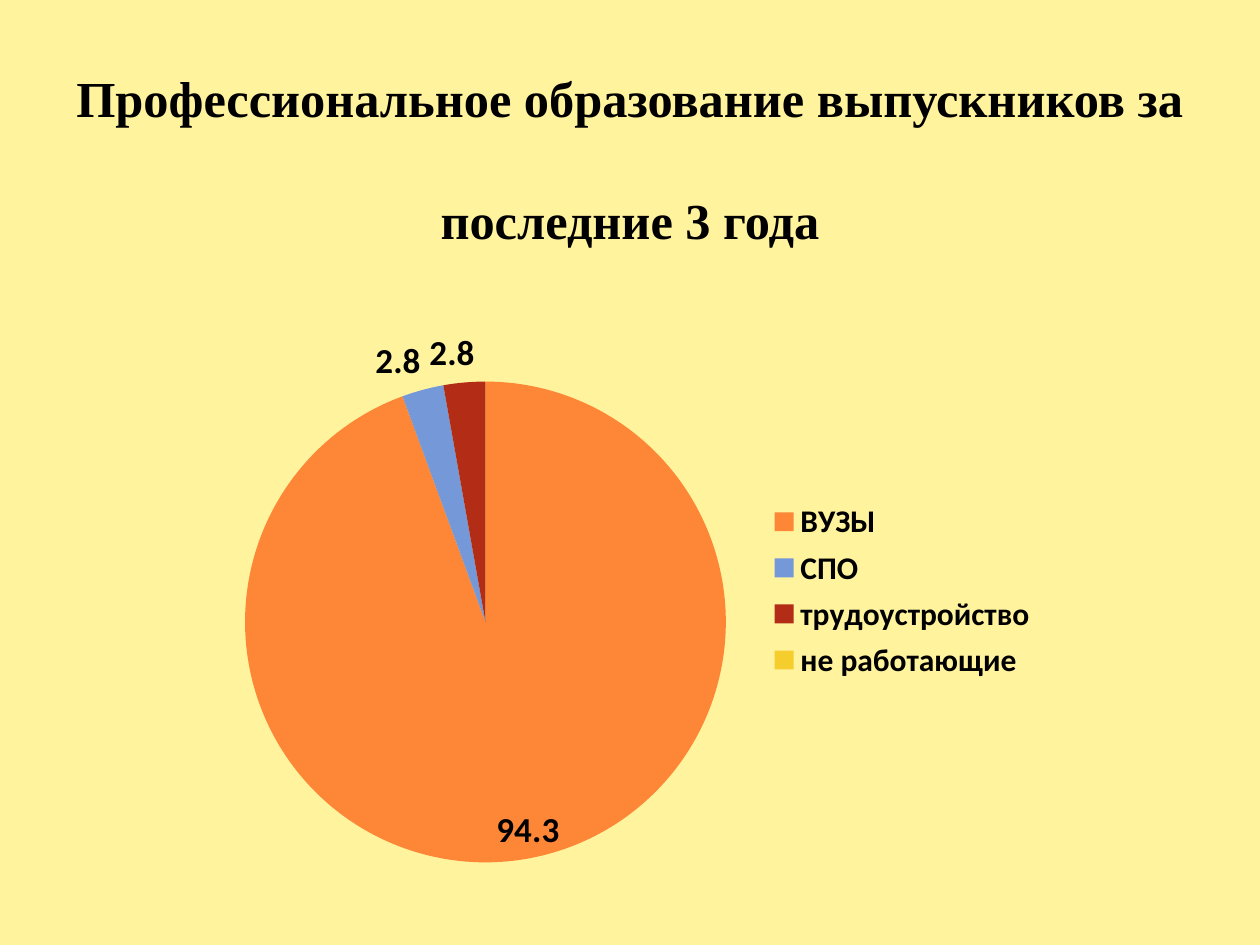
from lxml import etree
from pptx import Presentation
from pptx.chart.data import CategoryChartData
from pptx.dml.color import RGBColor
from pptx.enum.chart import XL_CHART_TYPE, XL_LABEL_POSITION, XL_LEGEND_POSITION
from pptx.enum.text import MSO_ANCHOR, MSO_AUTO_SIZE, PP_ALIGN
from pptx.oxml.ns import qn
from pptx.util import Pt

PIE = XL_CHART_TYPE.PIE
LEGEND_RIGHT = XL_LEGEND_POSITION.RIGHT
INSIDE, OUTSIDE = XL_LABEL_POSITION.INSIDE_END, XL_LABEL_POSITION.OUTSIDE_END
TOP, CENTER, NO_FIT = MSO_ANCHOR.TOP, PP_ALIGN.CENTER, MSO_AUTO_SIZE.NONE

CREAM = RGBColor(0xFF, 0xF3, 0x9D)
BLACK = RGBColor(0, 0, 0)
ORANGE = RGBColor(0xFE, 0x86, 0x37)
BLUE = RGBColor(0x75, 0x98, 0xD9)
RED = RGBColor(0xB3, 0x2C, 0x16)
YELLOW = RGBColor(0xF5, 0xCD, 0x2D)


class Deck:
    title_font, chart_font = "Times New Roman", "Calibri"

    def __init__(self, prs):
        self.s = prs.slides.add_slide(prs.slide_layouts[5])
        fill = self.s.background.fill
        fill.solid()
        fill.fore_color.rgb = CREAM

    def style(self, font, name, size, bold=True):
        font.name, font.size, font.bold = name, Pt(size), bold
        font.color.rgb = BLACK

    def title(self, lines, x, y, w, h):
        sp = self.s.shapes.title
        sp.left, sp.top, sp.width, sp.height = Pt(x), Pt(y), Pt(w), Pt(h)
        tf = sp.text_frame
        tf.text = "\n".join(lines)
        tf.word_wrap, tf.auto_size, tf.vertical_anchor = True, NO_FIT, TOP
        tf.margin_left = tf.margin_right = 0
        tf.margin_top = Pt(17)
        for i, p in enumerate(tf.paragraphs):
            p.alignment = CENTER
            p.line_spacing = 1.0
            p.space_before = Pt(35 if i else 0)
            self.style(p.font, self.title_font, 28.8)

    def layout(self, parent, index, settings):
        """Give a chart part a manual layout, as its child number index."""
        for old in parent.findall(qn("c:layout")):
            parent.remove(old)
        layout = etree.Element(qn("c:layout"))
        parent.insert(index, layout)
        manual = etree.SubElement(layout, qn("c:manualLayout"))
        for key, value in settings.items():
            etree.SubElement(manual, qn("c:" + key)).set("val", str(value))

    def pie(self, name, slices, x, y, w, h):
        data = CategoryChartData()
        data.categories = [label for label, *_ in slices]
        data.add_series(name, [value for _, value, *_ in slices])
        chart = self.s.shapes.add_chart(PIE, Pt(x), Pt(y), Pt(w), Pt(h), data).chart
        self.style(chart.font, self.chart_font, 10, False)
        chart.has_title = False
        edges = {"xMode": "edge", "yMode": "edge"}

        # Legend
        chart.has_legend = True
        legend = chart.legend
        legend.position, legend.include_in_layout = LEGEND_RIGHT, False
        self.style(legend.font, self.chart_font, 18)
        self.layout(legend._element, 1, {**edges, "x": 0.62, "y": 0.32, "w": 0.25, "h": 0.34})

        # Slices
        plot = chart.plots[0]
        plot.vary_by_categories = True
        self.layout(chart._chartSpace.chart.plotArea, 0,
                    {"layoutTarget": "inner", **edges, "x": 0.15, "y": 0.12, "w": 0.44, "h": 0.85})
        series = plot.series[0]
        labels = series.data_labels
        labels.show_value, labels.position = True, OUTSIDE
        self.style(labels.font, self.chart_font, 20)
        for i, (_, value, color, position, _) in enumerate(slices):
            point = series.points[i]
            point.format.fill.solid()
            point.format.fill.fore_color.rgb = color
            if value is not None:
                self.style(point.data_label.font, self.chart_font, 20)
                point.data_label.position = position

        # Sideways shifts keep the value labels apart
        for label, (*_, shift) in zip(labels._element.findall(qn("c:dLbl")), slices):
            if shift:
                self.layout(label, 1, {"x": shift, "y": 0})


def main():
    prs = Presentation()
    prs.slide_width, prs.slide_height = Pt(720), Pt(540)
    deck = Deck(prs)
    deck.title(["Профессиональное образование выпускников за", "последние 3 года"],
               36, 21.6, 648, 90)
    deck.pie("Series 1", [("ВУЗЫ", 94.3, ORANGE, INSIDE, 0.03),
                          ("СПО", 2.8, BLUE, OUTSIDE, 0),
                          ("трудоустройство", 2.8, RED, OUTSIDE, 0.01),
                          ("не работающие", None, YELLOW, OUTSIDE, 0)],
             42.5, 179.3, 635, 323.3)
    prs.save("out.pptx")


if __name__ == "__main__":
    main()
